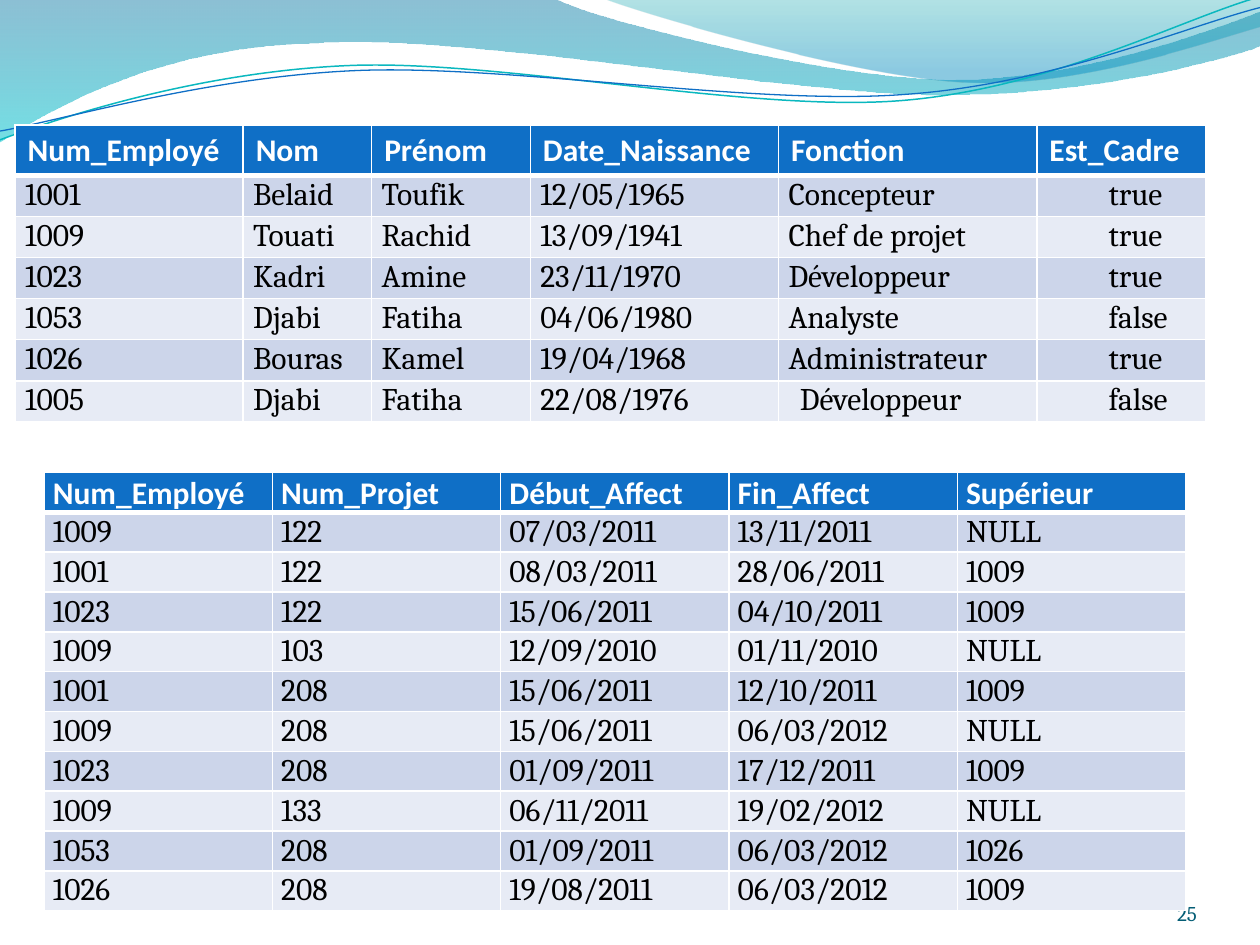
import math
from dataclasses import dataclass

from lxml import etree
from pptx import Presentation
from pptx.dml.color import RGBColor
from pptx.enum import text as t
from pptx.oxml import ns
from pptx.util import Inches, Pt


@dataclass(frozen=True)
class Theme:
    """Colours, fonts and type sizes of the slide."""
    header: str = "0F6FC6"
    bands: tuple = ("CCD5EA", "E7EBF5")
    rule: str = "FFFFFF"
    header_text: str = "FFFFFF"
    body_text: str = "000000"
    number_text: str = "045D75"
    teal: str = "0AB8BF"
    blue: str = "0F6FC6"
    left_wave: tuple = ((0, "0074A1", 45), (1, "00C6CF", 55))
    right_wave: tuple = ((0, "00A1A9", 30), (0.8, "008BBF", 45))
    header_font: str = "Calibri"
    body_font: str = "Cambria"
    table_size: int = 18
    number_size: int = 12


THEME = Theme()
STRAND_TILT = -2.7

LEFT_WAVE = [
    (0, 0), (4.4, -0.01),
    (4.76, 0.17, 6.64, 0.63, 7.58, 0.63), (8.53, 0.63, 9.58, 0.26, 10, 0.09),
    (10.01, 0.36),
    (9.83, 0.44, 8.7, 0.76, 7.46, 0.75), (6.22, 0.75, 3.82, 0.28, 2.57, 0.34),
    (1.29, 0.36, 0.46, 0.83, -0.01, 1.13), (0, 0),
]
RIGHT_WAVE = [
    (4.79, -0.01),
    (5.09, 0.11, 6.82, 0.62, 7.69, 0.65), (8.56, 0.69, 9.61, 0.32, 10, 0.21),
    (10, 0), (4.79, -0.01),
]
TEAL_STRAND = [
    (0, 1.11), (0.48, 0.93, 1.58, 0.57, 2.77, 0.52),
    (3.95, 0.47, 5.93, 0.89, 7.13, 0.8), (8.33, 0.71, 9.38, 0.15, 9.98, -0.02),
]
BLUE_STRAND = [
    (0, 1.04), (0.47, 0.96, 1.64, 0.61, 2.83, 0.56),
    (4.03, 0.51, 5.97, 0.84, 7.17, 0.75), (8.36, 0.67, 9.41, 0.21, 10, 0.06),
]

EMPLOYEES = [
    ("Num_Employé", "Nom", "Prénom", "Date_Naissance", "Fonction", "Est_Cadre"),
    ("1001", "Belaid", "Toufik", "12/05/1965", "Concepteur", "true"),
    ("1009", "Touati", "Rachid", "13/09/1941", "Chef de projet", "true"),
    ("1023", "Kadri", "Amine", "23/11/1970", "Développeur", "true"),
    ("1053", "Djabi", "Fatiha", "04/06/1980", "Analyste", "false"),
    ("1026", "Bouras", "Kamel", "19/04/1968", "Administrateur", "true"),
    ("1005", "Djabi", "Fatiha", "22/08/1976", "Développeur", "false"),
]
ASSIGNMENTS = [
    ("Num_Employé", "Num_Projet", "Début_Affect", "Fin_Affect", "Supérieur"),
    ("1009", "122", "07/03/2011", "13/11/2011", "NULL"),
    ("1001", "122", "08/03/2011", "28/06/2011", "1009"),
    ("1023", "122", "15/06/2011", "04/10/2011", "1009"),
    ("1009", "103", "12/09/2010", "01/11/2010", "NULL"),
    ("1001", "208", "15/06/2011", "12/10/2011", "1009"),
    ("1009", "208", "15/06/2011", "06/03/2012", "NULL"),
    ("1023", "208", "01/09/2011", "17/12/2011", "1009"),
    ("1009", "133", "06/11/2011", "19/02/2012", "NULL"),
    ("1053", "208", "01/09/2011", "06/03/2012", "1026"),
    ("1026", "208", "19/08/2011", "06/03/2012", "1009"),
]


def write(frame, content, *, font, size, color, bold=False,
          align=t.PP_ALIGN.LEFT, spacing=None, indent=0):
    """Put one formatted paragraph in a text frame."""
    paragraph = frame.paragraphs[0]
    paragraph.alignment = align
    if spacing:
        paragraph.line_spacing = spacing
    if indent:
        paragraph._p.get_or_add_pPr().set("marL", str(Inches(indent)))
    run = paragraph.add_run()
    run.text = content
    run.font.name, run.font.size, run.font.bold = font, Pt(size), bold
    run.font.color.rgb = RGBColor.from_string(color)


def turn(point, center, degrees):
    """Turn a point clockwise about a center."""
    x, y = point[0] - center[0], point[1] - center[1]
    cos, sin = math.cos(math.radians(degrees)), math.sin(math.radians(degrees))
    return center[0] + x * cos - y * sin, center[1] + x * sin + y * cos


def add_outline(slide, box, outline, close=False, tilt=0):
    """Draw lines and cubic curves within a box that is tilted about its center."""
    left, top, width, height = box
    center = left + width / 2, top + height / 2
    points = [turn(segment[i:i + 2], center, -tilt)
              for segment in outline for i in range(0, len(segment), 2)]
    places = [(Inches(x), Inches(y)) for x, y in points]
    builder = slide.shapes.build_freeform(*places[0], scale=1.0)
    builder.add_line_segments(places[1:], close=close)
    shape = builder.convert_to_shape()
    lines = list(shape.element.iter(ns.qn("a:lnTo")))
    for segment in outline[1:]:
        count = len(segment) // 2
        group, lines = lines[:count], lines[count:]
        if count == 3:
            curve = etree.Element(ns.qn("a:cubicBezTo"))
            group[0].addprevious(curve)
            for line in group:
                curve.append(line[0])
                line.getparent().remove(line)
    shape.rotation = tilt
    shape.shadow.inherit = False
    return shape


def add_wave(slide, box, outline, stops):
    """Draw a closed wave with a translucent vertical gradient."""
    wave = add_outline(slide, box, outline, close=True)
    wave.line.fill.background()
    wave.fill.gradient()
    wave.fill.gradient_angle = 270
    for stop, (position, color, _) in zip(wave.fill.gradient_stops, stops):
        stop.position = position
        stop.color.rgb = RGBColor.from_string(color)
    for node, (_, _, opacity) in zip(wave.element.iter(ns.qn("a:srgbClr")), stops):
        etree.SubElement(node, ns.qn("a:alpha"), val=str(opacity * 1000))


def add_strand(slide, box, outline, color, width):
    """Draw a thin open curve across the banner."""
    strand = add_outline(slide, box, outline, tilt=STRAND_TILT)
    strand.fill.background()
    strand.line.color.rgb = RGBColor.from_string(color)
    strand.line.width = Pt(width)


def add_page_number(slide, box, number):
    """Place the page number at the bottom right of its box."""
    frame = slide.shapes.add_textbox(*map(Inches, box)).text_frame
    frame.word_wrap = True
    frame.vertical_anchor = t.MSO_ANCHOR.BOTTOM
    frame.margin_left = frame.margin_right = frame.margin_top = frame.margin_bottom = 0
    write(frame, number, font=THEME.body_font, size=THEME.number_size,
          color=THEME.number_text, align=t.PP_ALIGN.RIGHT)


def rule_cell(cell, top, bottom):
    """Give a cell its white borders, with widths in points."""
    properties = cell._tc.get_or_add_tcPr()
    for side, width in (("L", 1), ("R", 1), ("T", top), ("B", bottom)):
        border = etree.SubElement(properties, ns.qn(f"a:ln{side}"), w=str(Pt(width)))
        fill = etree.SubElement(border, ns.qn("a:solidFill"))
        etree.SubElement(fill, ns.qn("a:srgbClr"), val=THEME.rule)


def add_records(slide, box, records, widths, header_height, indent_of, tight_header):
    """Fill the box with a banded table under a blue header row."""
    table = slide.shapes.add_table(len(records), len(widths), *map(Inches, box)).table
    body_height = (box[3] - header_height) / (len(records) - 1)
    for column, width in zip(table.columns, widths):
        column.width = Inches(width)
    for r, record in enumerate(records):
        is_header = r == 0
        table.rows[r].height = Inches(header_height if is_header else body_height)
        is_tight = tight_header or not is_header
        for c, value in enumerate(record):
            cell = table.cell(r, c)
            rule_cell(cell, 3 if r == 1 else 1, 3 if is_header else 1)
            cell.fill.solid()
            cell.fill.fore_color.rgb = RGBColor.from_string(
                THEME.header if is_header else THEME.bands[(r - 1) % 2])
            if is_tight:
                cell.margin_left = cell.margin_right = Inches(0.07)
                cell.margin_top = cell.margin_bottom = 0
            write(cell.text_frame, value, size=THEME.table_size, bold=is_header,
                  font=THEME.header_font if is_header else THEME.body_font,
                  color=THEME.header_text if is_header else THEME.body_text,
                  spacing=1.05 if is_tight else None,
                  indent=0 if is_header else indent_of(r, c))


def employee_indent(row, column):
    """Return the indent in inches of a cell in the employee table."""
    if column == 5:
        return 0.5
    return 0.1 if (row, column) == (6, 4) else 0.01


def main():
    """Build the slide and save it."""
    deck = Presentation()
    deck.slide_width, deck.slide_height = Inches(10), Inches(7.5)
    slide = deck.slides.add_slide(deck.slide_layouts[6])
    add_wave(slide, (-0.01, -0.01, 10.02, 1.14), LEFT_WAVE, THEME.left_wave)
    add_wave(slide, (4.79, -0.01, 5.21, 0.7), RIGHT_WAVE, THEME.right_wave)
    add_strand(slide, (-0.02, 0.22, 10.02, 0.71), TEAL_STRAND, THEME.teal, 0.85)
    add_strand(slide, (-0.02, 0.3, 10.03, 0.58), BLUE_STRAND, THEME.blue, 0.75)
    add_page_number(slide, (8.67, 6.95, 0.83, 0.4), "25")
    add_records(slide, (0.35, 3.75, 9.06, 3.48), ASSIGNMENTS, [9.06 / 5] * 5,
                3.48 / 11, lambda row, column: 0, True)
    add_records(slide, (0.12, 0.99, 9.45, 2.36), EMPLOYEES,
                [1.81, 1.02, 1.26, 1.97, 2.05, 1.34], 0.4, employee_indent, False)
    deck.save("out.pptx")


if __name__ == "__main__":
    main()
